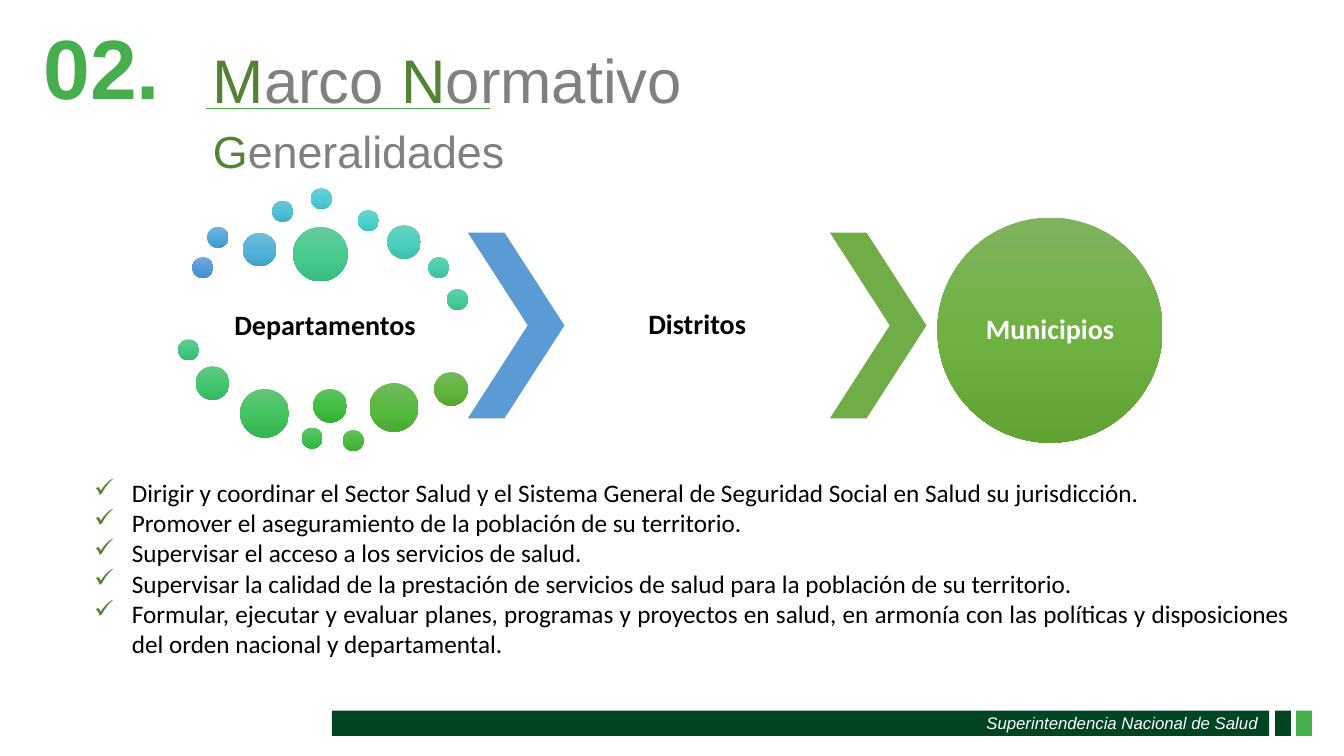
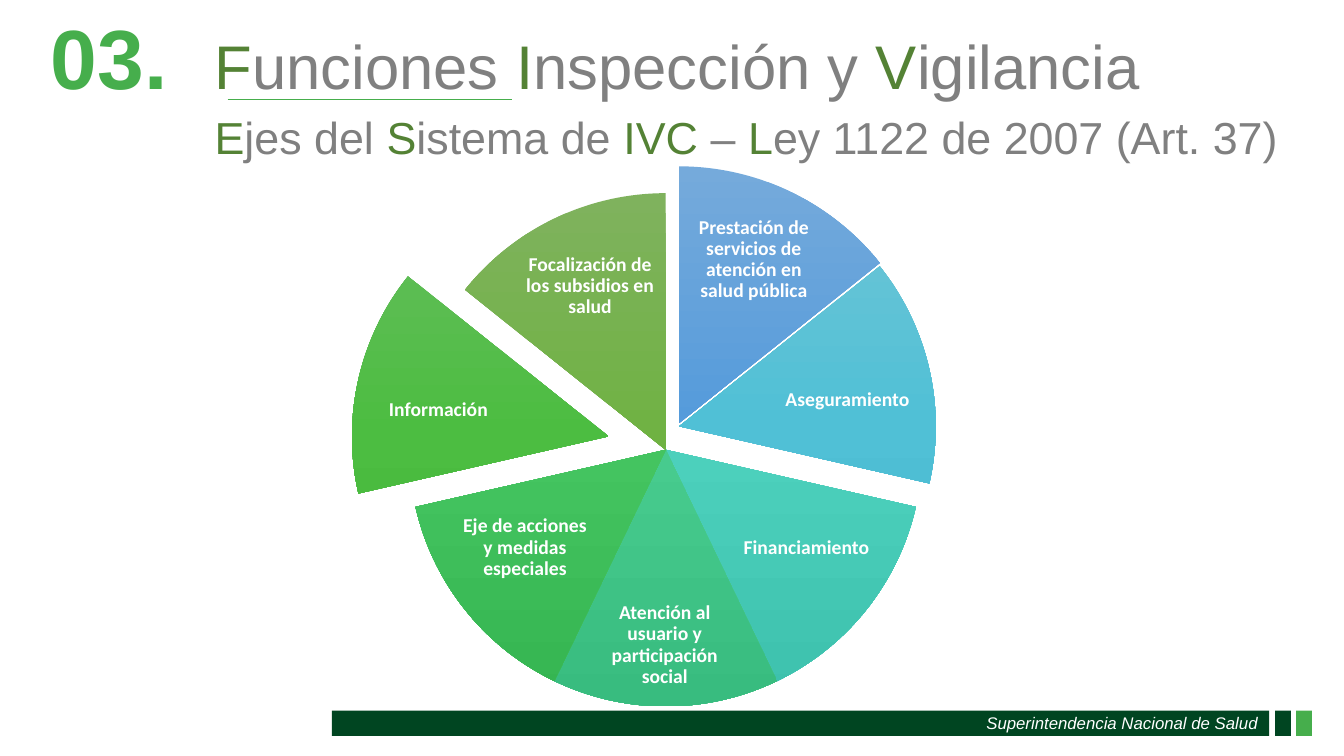
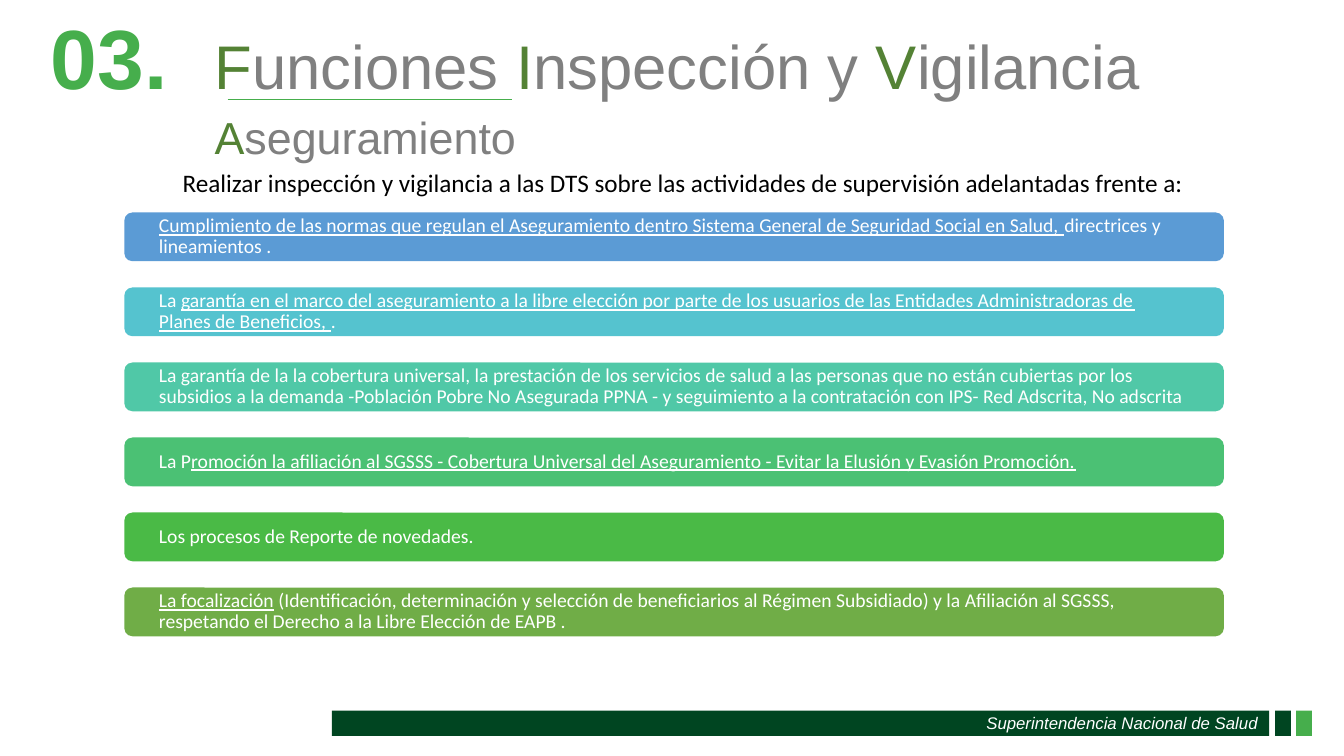
"""Build three slides on territorial health supervision on a 160 by 90 grid."""
import copy

import lxml.etree
import pptx
import pptx.dml.color
import pptx.enum.shapes
import pptx.enum.text
import pptx.oxml.ns
import pptx.util

SHAPE = pptx.enum.shapes.MSO_SHAPE
ALIGN = pptx.enum.text.PP_ALIGN
MIDDLE = pptx.enum.text.MSO_ANCHOR.MIDDLE
COLUMNS, ROWS = 160, 90
CELL = pptx.util.Pt(6)


class Theme:
    heading_font, body_font = "Arial", "Calibri"
    dark, leaf, accent, grey = "004521", "46AE4C", "548235", "808080"
    black, white = "000000", "FFFFFF"
    blue, olive = "5B9BD5", "70AD47"
    number, title, subtitle, footer = 60, 44, 32, 12
    stage, body, label = 20, 18, 14


def place(page, kind, cells, colour=None, shaded=False):
    left, top, width, height = [round(cell * CELL) for cell in cells]
    if kind is None:
        shape = page.shapes.add_textbox(left, top, width, height)
    else:
        shape = page.shapes.add_shape(kind, left, top, width, height)
        shape.shadow.inherit = False
        shape.line.fill.background()
        if shaded:
            middle = [int(colour[i:i + 2], 16) for i in (0, 2, 4)]
            light = [round(part + (max(middle) - part) * 0.24) for part in middle]
            deep = [part - 15 for part in middle]
            shape.fill.gradient()
            shape.fill.gradient_angle = 270
            stops = shape.element.find(".//" + pptx.oxml.ns.qn("a:gsLst"))
            stops.insert(1, copy.deepcopy(stops[0]))
            for stop, position, tone in zip(shape.fill.gradient_stops, (0, 0.5, 1), (light, middle, deep)):
                stop.position = position
                stop.color.rgb = pptx.dml.color.RGBColor(*tone)
        else:
            shape.fill.solid()
            shape.fill.fore_color.rgb = pptx.dml.color.RGBColor.from_string(colour)
    frame = shape.text_frame
    frame.word_wrap = True
    frame.vertical_anchor = MIDDLE
    frame.margin_left = frame.margin_right = frame.margin_top = frame.margin_bottom = 0
    return shape


def write(para, text, size, colour, font=Theme.body_font, align=ALIGN.CENTER, spacing=0.9, **styles):
    para.alignment = align
    para.line_spacing = spacing
    span = para.add_run()
    span.text = text
    span.font.name = font
    span.font.size = pptx.util.Pt(size)
    span.font.color.rgb = pptx.dml.color.RGBColor.from_string(colour)
    for style, value in styles.items():
        setattr(span.font, style, value)


deck = pptx.Presentation()
deck.slide_width, deck.slide_height = COLUMNS * CELL, ROWS * CELL
layout = deck.slide_layouts[5]
for holder in list(layout.placeholders)[1:]:
    layout.shapes.element.remove(holder.element)

functions = ["F", "unciones ", "I", "nspección y ", "V", "igilancia"]
headings = [
    ("02.", (1.9, 4.4), (24.5, 3.4), (24.5, 12.96),
     ["M", "arco ", "N", "ormativo"], ["G", "eneralidades"]),
    ("03.", (2.8, 3.2), (24.7, 1.7), (27.1, 11.8), functions,
     ["E", "jes del ", "S", "istema de ", "IVC", " – ", "L", "ey 1122 de 2007 (Art. 37)"]),
    ("03.", (2.8, 3.2), (24.7, 1.7), (27.1, 11.8), functions, ["A", "seguramiento"]),
]
pages = []
for number, number_at, title_at, rule_at, title, subtitle in headings:
    page = deck.slides.add_slide(layout)
    pages.append(page)

    box = place(page, None, (*number_at, 18, 8.4))
    box.text_frame.margin_right = pptx.util.Inches(0.07)
    write(box.text_frame.paragraphs[0], number, Theme.number, Theme.leaf,
          Theme.heading_font, ALIGN.RIGHT, bold=True)

    holder = page.shapes.title
    holder.left, holder.top = [round(cell * CELL) for cell in title_at]
    holder.width, holder.height = 130 * CELL, 18 * CELL
    frame = holder.text_frame
    frame.auto_size = pptx.enum.text.MSO_AUTO_SIZE.NONE
    frame.word_wrap = True
    frame.vertical_anchor = MIDDLE
    frame.margin_left = frame.margin_right = pptx.util.Inches(0.07)
    frame.margin_top = frame.margin_bottom = pptx.util.Inches(0.04)
    for para, parts, size in ((frame.paragraphs[0], title, Theme.title),
                              (frame.add_paragraph(), subtitle, Theme.subtitle)):
        for index, part in enumerate(parts):
            write(para, part, size, Theme.grey if index % 2 else Theme.accent,
                  Theme.heading_font, ALIGN.LEFT, 1.15)

    left, top = [round(cell * CELL) for cell in rule_at]
    rule = page.shapes.add_connector(pptx.enum.shapes.MSO_CONNECTOR.STRAIGHT,
                                     left, top, left + round(33.8 * CELL), top)
    rule.line.color.rgb = pptx.dml.color.RGBColor.from_string(Theme.leaf)
    rule.line.width = pptx.util.Pt(0.5)
    lxml.etree.SubElement(rule.element.spPr, pptx.oxml.ns.qn("a:effectLst"))

norms, axes, insurance = pages

for left, width, colour, text in (
    (39.5, 111.6, Theme.dark, "Superintendencia Nacional de Salud"),
    (151.8, 1.9, Theme.dark, None),
    (154.3, 1.9, Theme.leaf, None),
):
    band = place(norms, SHAPE.RECTANGLE, (left, 84.6, width, 3), colour)
    if text:
        band.text_frame.margin_right = pptx.util.Inches(0.11)
        write(band.text_frame.paragraphs[0], text, Theme.footer, Theme.white,
              Theme.heading_font, ALIGN.RIGHT, 1.0, italic=True)
    layout.shapes.element.append(band.element)

bubbles = [
    (22.9, 30.6, 2.5, "559BDB"), (24.7, 27, 2.5, "53A8D9"), (28.9, 27.7, 4, "52B4D8"),
    (32.4, 23.9, 2.5, "50C0D6"), (37, 22.4, 2.5, "4FCCD4"), (42.6, 25, 2.5, "4DD2CC"),
    (46.1, 26.8, 4, "4CD0BC"), (51, 30.6, 2.5, "4ACEAD"), (53.2, 34.4, 2.5, "49CD9D"),
    (34.9, 27, 6.5, "47CB8E"), (21.2, 40.4, 2.5, "46C97F"), (23.3, 43.6, 4, "45C76F"),
    (28.6, 46.3, 5.8, "44C460"), (35.9, 50.9, 2.5, "42C252"), (37.3, 46.3, 4, "41C043"),
    (40.8, 51.2, 2.5, "4CBD41"), (44, 45.6, 5.8, "58BA41"), (51.7, 44.3, 4, "64B641"),
]
for left, top, size, colour in bubbles:
    place(norms, SHAPE.OVAL, (left, top, size, size), colour, shaded=True)
for left, colour in ((55.7, Theme.blue), (98.8, Theme.olive)):
    chevron = place(norms, SHAPE.CHEVRON, (left, 27.7, 11.5, 22.1), colour)
    chevron.adjustments[0] = 0.62
stages = [
    (place(norms, None, (22.9, 33.7, 31.6, 10.4)), "Departamentos", Theme.black),
    (place(norms, None, (67.2, 27.7, 31.6, 22.1)), "Distritos", Theme.black),
    (place(norms, SHAPE.OVAL, (111.6, 25.9, 26.8, 26.8), "6FB242", shaded=True), "Municipios", Theme.white),
]
for shape, text, colour in stages:
    write(shape.text_frame.paragraphs[0], text, Theme.stage, colour, bold=True)

duties = [
    "Dirigir y coordinar el Sector Salud y el Sistema General de Seguridad Social en Salud su jurisdicción.",
    "Promover el aseguramiento de la población de su territorio.",
    "Supervisar el acceso a los servicios de salud.",
    "Supervisar la calidad de la prestación de servicios de salud para la población de su territorio.",
    "Formular, ejecutar y evaluar planes, programas y proyectos en salud, en armonía con las políticas "
    "y disposiciones del orden nacional y departamental.",
]
frame = place(norms, None, (11.2, 56.8, 142.3, 26)).text_frame
frame.vertical_anchor = pptx.enum.text.MSO_ANCHOR.TOP
for index, duty in enumerate(duties):
    para = frame.add_paragraph() if index else frame.paragraphs[0]
    properties = para._p.get_or_add_pPr()
    properties.set("marL", str(round(4.5 * CELL)))
    properties.set("indent", str(round(-4.5 * CELL)))
    tint = lxml.etree.SubElement(properties, pptx.oxml.ns.qn("a:buClr"))
    lxml.etree.SubElement(tint, pptx.oxml.ns.qn("a:srgbClr"), val=Theme.accent)
    lxml.etree.SubElement(properties, pptx.oxml.ns.qn("a:buChar"), char="✓")
    write(para, duty, Theme.body, Theme.black, align=ALIGN.JUSTIFY, spacing=1.0)

hub = (48.7, 23)
slices = [
    ((50.3, 19.8), "559BDB", (81.4, 25.6, 16.7, 10.6), "Prestación de servicios de atención en salud pública"),
    ((50.3, 20.2), "50C0D6", (92, 42, 17.8, 11.3), "Aseguramiento"),
    (hub, "4CD0BC", (88, 59.4, 16, 11.6), "Financiamiento"),
    (hub, "47CB8E", (71, 71, 16.3, 11.6), "Atención al usuario y participación social"),
    (hub, "44C460", (54.5, 59.4, 16, 11.6), "Eje de acciones y medidas especiales"),
    ((41.9, 21.4), "4CBD41", (43.3, 43.2, 17.8, 11.3), "Información"),
    (hub, "6FB242", (61.9, 28.8, 16.7, 10.6), "Focalización de los subsidios en salud"),
]
turn = 216
top_angle, step = turn * 0.75, turn / len(slices)
for index, (corner, colour, label_cells, text) in enumerate(slices):
    wedge = place(axes, SHAPE.PIE, (*corner, 61.1, 61.1), colour, shaded=True)
    wedge.adjustments[0] = (top_angle + index * step) % turn
    wedge.adjustments[1] = (top_angle + (index + 1) * step) % turn
    label = place(axes, None, label_cells)
    label.text_frame.margin_left = label.text_frame.margin_right = pptx.util.Inches(0.02)
    write(label.text_frame.paragraphs[0], text, Theme.label, Theme.white, bold=True)

intro = place(insurance, None, (10.7, 19.3, 141.2, 4.8))
write(intro.text_frame.paragraphs[0],
      "Realizar inspección y vigilancia a las DTS sobre las actividades de supervisión adelantadas frente a:",
      Theme.body, Theme.black, spacing=1.0)
topics = [
    (Theme.blue, [
        ("Cumplimiento de las normas que regulan el Aseguramiento dentro Sistema General de Seguridad "
         "Social en Salud, ", True),
        ("directrices y lineamientos .", False)]),
    ("55C3CF", [
        ("La ", False),
        ("garantía en el marco del aseguramiento a la libre elección por parte de los usuarios de las "
         "Entidades Administradoras de Planes de Beneficios, ", True),
        (".", False)]),
    ("50C8A7", [
        ("La garantía de la la cobertura universal, la prestación de los servicios de salud a las personas "
         "que no están cubiertas por los subsidios a la demanda -Población Pobre No Asegurada PPNA - y "
         "seguimiento a la contratación con IPS- Red Adscrita, No adscrita", False)]),
    ("4BC174", [
        ("La P", False),
        ("romoción la afiliación al SGSSS - Cobertura Universal del Aseguramiento - Evitar la Elusión y "
         "Evasión Promoción.", True)]),
    ("4ABA46", [("Los procesos de Reporte de novedades.", False)]),
    (Theme.olive, [
        ("La focalización", True),
        (" (Identificación, determinación y selección de beneficiarios al Régimen Subsidiado) y la "
         "Afiliación al SGSSS, respetando el Derecho a la Libre Elección de EAPB .", False)]),
]
for index, (colour, parts) in enumerate(topics):
    bar = place(insurance, SHAPE.ROUNDED_RECTANGLE, (14.8, 25.3 + index * 8.93, 130.9, 5.8), colour)
    bar.text_frame.margin_left = bar.text_frame.margin_right = pptx.util.Inches(0.32)
    for text, underlined in parts:
        write(bar.text_frame.paragraphs[0], text, Theme.label, Theme.white,
              align=ALIGN.LEFT, underline=underlined)

deck.save("out.pptx")
